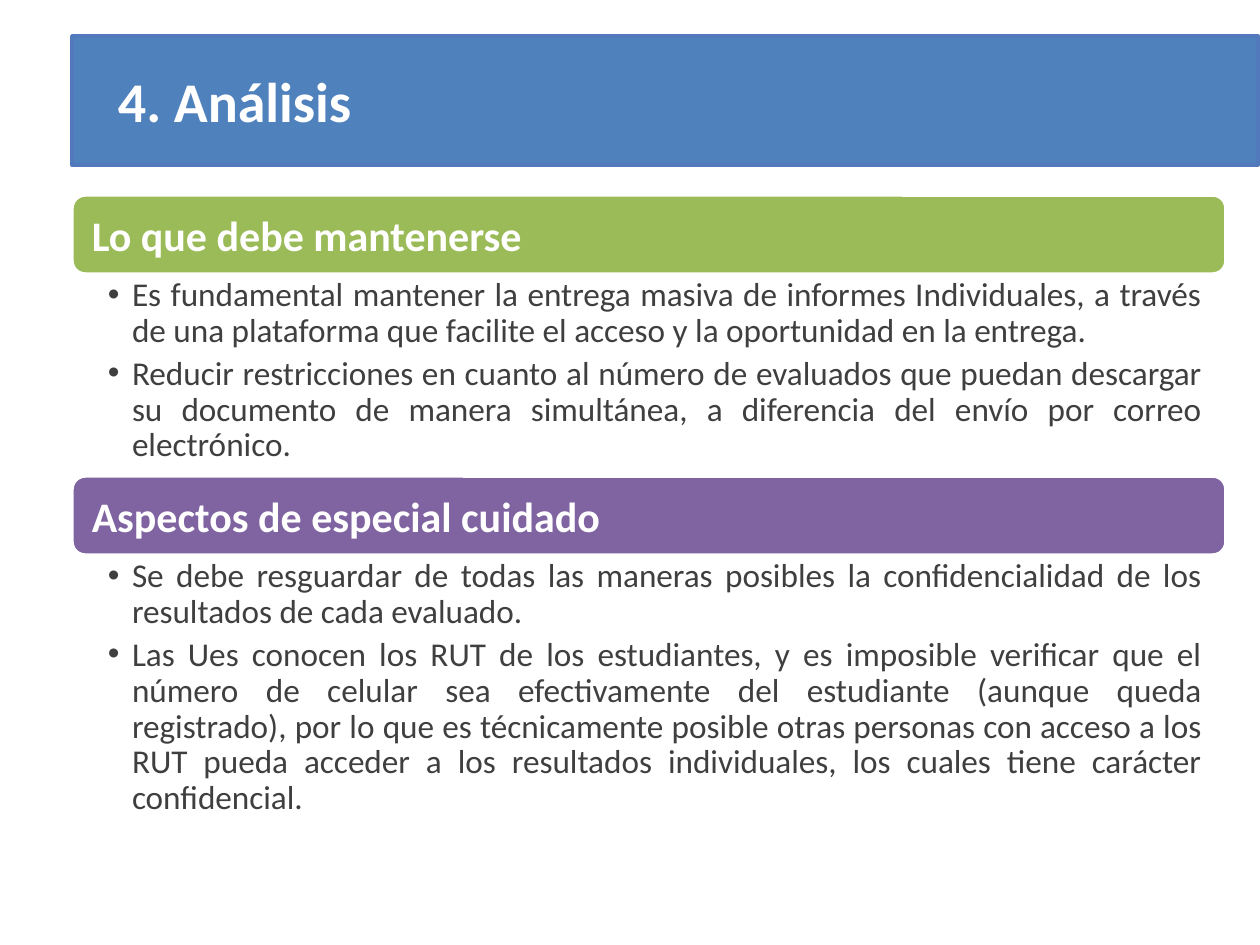
from lxml import etree
from pptx import Presentation
from pptx import util as u
from pptx.dml import color
from pptx.enum import shapes, text
from pptx.oxml import ns

FONT = "Calibri"
LEFT, WIDTH, BAND = 72, 1154, 79
TOPICS = [
    ("Lo que debe mantenerse", "9BBB59", 195, 202, [
        "Es fundamental mantener la entrega masiva de informes Individuales, "
        "a través de una plataforma que facilite el acceso y la oportunidad "
        "en la entrega.",
        "Reducir restricciones en cuanto al número de evaluados que puedan "
        "descargar su documento de manera simultánea, a diferencia del envío "
        "por correo electrónico."]),
    ("Aspectos de especial cuidado", "8064A2", 476, 273, [
        "Se debe resguardar de todas las maneras posibles la confidencialidad "
        "de los resultados de cada evaluado.",
        "Las Ues conocen los RUT de los estudiantes, y es imposible verificar "
        "que el número de celular sea efectivamente del estudiante (aunque "
        "queda registrado), por lo que es técnicamente posible otras personas "
        "con acceso a los RUT pueda acceder a los resultados individuales, "
        "los cuales tiene carácter confidencial."]),
]


def px(n):
    return u.Emu(round(n * 914400 / 126))


def rgb(code):
    return color.RGBColor.from_string(code)


def style(para, size, code, bold=False):
    for run in para.runs:
        font = run.font
        font.name, font.size, font.bold = FONT, u.Pt(size), bold
        font.color.rgb = rgb(code)


def inset(frame, left, top, right, low):
    frame.word_wrap = True
    frame.margin_left, frame.margin_top = px(left), px(top)
    frame.margin_right, frame.margin_bottom = px(right), px(low)


def banner(slide, kind, box, fill, line, words, size, pad):
    """Filled bar with one bold white line of text, set in by pad."""
    bar = slide.shapes.add_shape(kind, *map(px, box))
    bar.shadow.inherit = False
    bar.fill.solid()
    bar.fill.fore_color.rgb = rgb(fill)
    bar.line.color.rgb = rgb(line)
    bar.line.width = u.Pt(2)
    frame = bar.text_frame
    inset(frame, pad, 6, 13, 6)
    frame.vertical_anchor = text.MSO_ANCHOR.MIDDLE
    frame.text = words
    para = frame.paragraphs[0]
    para.alignment = text.PP_ALIGN.LEFT
    style(para, size, "FFFFFF", True)


def bullet(para):
    props = para._p.get_or_add_pPr()
    props.set("marL", str(px(24)))
    props.set("indent", str(px(-24)))
    etree.SubElement(props, ns.qn("a:buFont")).set("typeface", "Arial")
    etree.SubElement(props, ns.qn("a:buChar")).set("char", "•")


def points(slide, box, items):
    frame = slide.shapes.add_textbox(*map(px, box)).text_frame
    inset(frame, 36, 4, 24, 4)
    frame.text = "\n".join(items)
    for para in frame.paragraphs:
        bullet(para)
        para.level = 1
        para.alignment = text.PP_ALIGN.JUSTIFY
        para.line_spacing = 0.9
        para.space_after = u.Pt(3.8)
        style(para, 19, "3F3F3F")


def topic(slide, box, head, fill, items):
    left, top, width, high = box
    banner(slide, shapes.MSO_SHAPE.ROUNDED_RECTANGLE,
           (left, top, width, BAND), fill, "FFFFFF", head, 24, 16)
    points(slide, (left, top + BAND, width, high - BAND), items)


def main():
    deck = Presentation()
    deck.slide_width, deck.slide_height = px(1260), px(945)
    slide = deck.slides.add_slide(deck.slide_layouts[6])
    banner(slide, shapes.MSO_SHAPE.RECTANGLE, (LEFT, 36, 1186, 129),
           "4F81BD", "5179BB", "4. Análisis", 32, 46)
    for head, fill, top, high, items in TOPICS:
        topic(slide, (LEFT, top, WIDTH, BAND + high), head, fill, items)
    deck.save("out.pptx")


if __name__ == "__main__":
    main()
